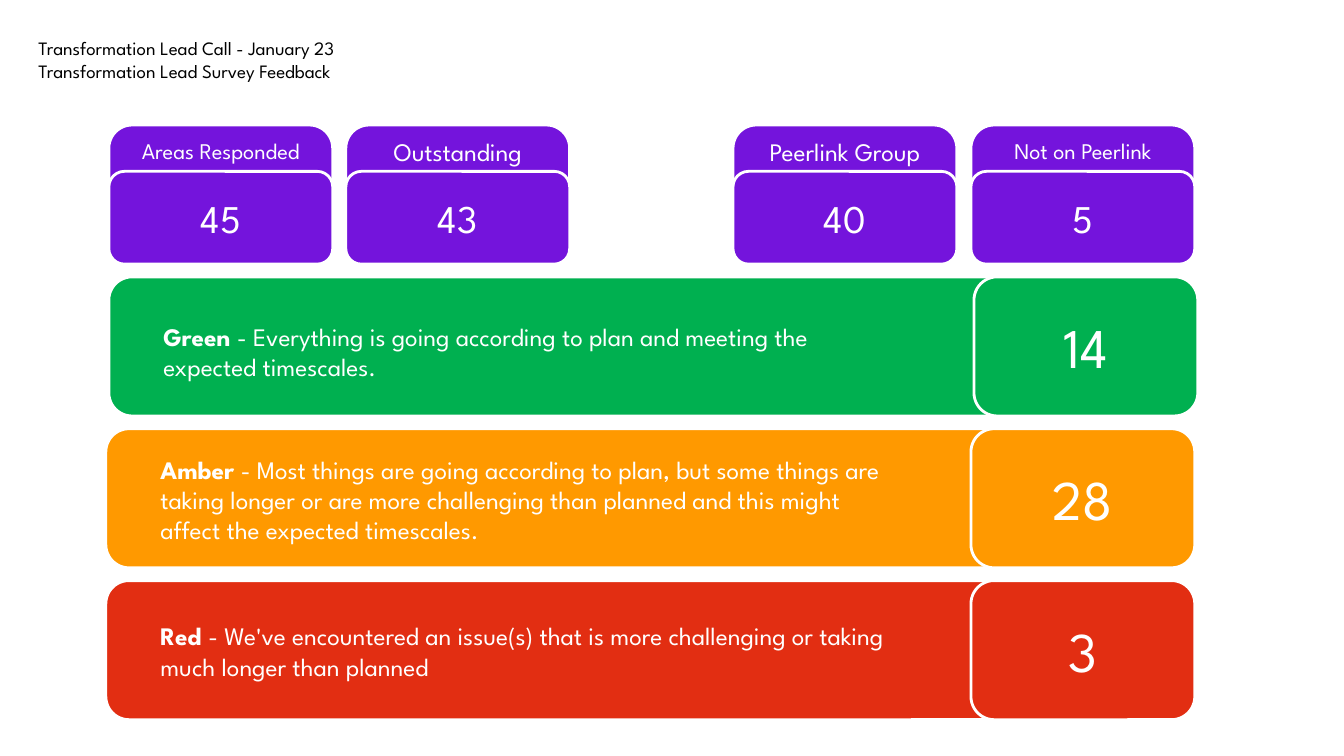
from dataclasses import dataclass

from pptx import Presentation
from pptx.dml.color import RGBColor
from pptx.enum.shapes import MSO_SHAPE
from pptx.enum.text import MSO_ANCHOR, MSO_AUTO_SIZE, PP_ALIGN
from pptx.util import Inches, Pt


@dataclass(frozen=True)
class Theme:
    font: str = "League Spartan"
    black: str = "000000"
    white: str = "FFFFFF"
    purple: str = "7414DC"
    green: str = "00B050"
    amber: str = "FF9900"
    red: str = "E22E12"
    heading: float = 13.5
    small_label: int = 16
    label: int = 18
    card_count: int = 28
    rating_count: int = 40


THEME = Theme()

# Grid: four card columns above three full-width rows
COLUMNS = (1.08, 3.43, 7.27, 9.63)
CARD_WIDTH = 2.22
ROW_WIDTH = 10.8
ROW_HEIGHT = 1.38
FIRST_ROW, LAST_ROW = 1.24, 5.76
ROW_PITCH = (LAST_ROW - FIRST_ROW) / 3
CARD_HEAD = ROW_HEIGHT / 3
HEADING_PLACE = (0.38, 0.36, 6.29, 0.23)

# Label, label size, count
CARDS = (
    ("Areas Responded", THEME.small_label, "45"),
    ("Outstanding", THEME.label, "43"),
    ("Peerlink Group", THEME.label, "40"),
    ("Not on Peerlink", THEME.small_label, "5"),
)

# Name, description, count, colour, left edge, drop and height of the description
RATINGS = (
    ("Green", "- Everything is going according to plan and meeting the expected timescales.",
     "14", THEME.green, 1.08, 0.39, 0.61),
    ("Amber", "- Most things are going according to plan, but some things are taking longer "
     "or are more challenging than planned and this might affect the expected timescales.",
     "28", THEME.amber, 1.05, 0.2, 1.01),
    ("Red", "- We've encountered an issue(s) that is more challenging or taking much longer "
     "than planned", "3", THEME.red, 1.05, 0.35, 0.87),
)


def apply_format(target, values):
    for name, value in values.items():
        setattr(target, name, value)


def place(box, left, top, width, height):
    apply_format(box, {"left": Inches(left), "top": Inches(top),
                       "width": Inches(width), "height": Inches(height)})


def add_span(para, text, size, colour, bold=False):
    span = para.add_run()
    span.text = text
    apply_format(span.font, {"name": THEME.font, "size": Pt(size), "bold": bold})
    span.font.color.rgb = RGBColor.from_string(colour)


def add_heading(box, text, row, anchor):
    """Format one of the two heading lines, stacked by row."""
    left, top, width, height = HEADING_PLACE
    place(box, left, top + row * height, width, height)
    apply_format(box.text_frame, {
        "word_wrap": True, "vertical_anchor": anchor, "margin_left": 0,
        "margin_top": 0, "margin_right": 0, "margin_bottom": 0})
    para = box.text_frame.paragraphs[0]
    para.alignment = PP_ALIGN.LEFT
    add_span(para, text, THEME.heading, THEME.black)


def add_panel(group, left, top, width, height, colour, text="", size=0,
              anchor=MSO_ANCHOR.MIDDLE):
    """Rounded, white-edged panel with optional centred text."""
    panel = group.shapes.add_shape(MSO_SHAPE.ROUNDED_RECTANGLE, Inches(left), Inches(top),
                                   Inches(width), Inches(height))
    panel.shadow.inherit = False
    panel.fill.solid()
    panel.fill.fore_color.rgb = RGBColor.from_string(colour)
    panel.line.color.rgb = RGBColor.from_string(THEME.white)
    panel.line.width = Pt(2)
    if text:
        apply_format(panel.text_frame, {"word_wrap": True, "vertical_anchor": anchor})
        para = panel.text_frame.paragraphs[0]
        para.alignment = PP_ALIGN.CENTER
        add_span(para, text, size, THEME.white)


def add_card(page, left, label, label_size, count):
    group = page.shapes.add_group_shape()
    add_panel(group, left, FIRST_ROW, CARD_WIDTH, ROW_HEIGHT, THEME.purple,
              label, label_size, MSO_ANCHOR.TOP)
    add_panel(group, left, FIRST_ROW + CARD_HEAD, CARD_WIDTH, ROW_HEIGHT - CARD_HEAD,
              THEME.purple, count, THEME.card_count)


def add_rating(page, top, name, description, count, colour, left, drop, height):
    group = page.shapes.add_group_shape()
    add_panel(group, left, top, ROW_WIDTH, ROW_HEIGHT, colour)
    add_panel(group, left + ROW_WIDTH - CARD_WIDTH, top, CARD_WIDTH, ROW_HEIGHT, colour,
              count, THEME.rating_count)
    box = group.shapes.add_textbox(Inches(left + 0.42), Inches(top + drop),
                                   Inches(7.52), Inches(height))
    apply_format(box.text_frame, {"word_wrap": True, "margin_left": Inches(0.12),
                                  "auto_size": MSO_AUTO_SIZE.SHAPE_TO_FIT_TEXT})
    para = box.text_frame.paragraphs[0]
    add_span(para, name + " ", THEME.label, THEME.white, bold=True)
    add_span(para, description, THEME.label, THEME.white)


def main():
    deck = Presentation()
    apply_format(deck, {"slide_width": Inches(13.33), "slide_height": Inches(7.5)})
    page = deck.slides.add_slide(deck.slide_layouts[5])

    # Heading lines
    add_heading(page.shapes.title, "Transformation Lead Call - January 23", 0,
                MSO_ANCHOR.BOTTOM)
    add_heading(page.shapes.add_textbox(0, 0, 0, 0), "Transformation Lead Survey Feedback", 1,
                MSO_ANCHOR.TOP)

    # Response cards
    for left, card in zip(COLUMNS, CARDS):
        add_card(page, left, *card)

    # Rating rows
    for row, rating in enumerate(RATINGS, start=1):
        add_rating(page, FIRST_ROW + row * ROW_PITCH, *rating)

    deck.save("out.pptx")


if __name__ == "__main__":
    main()
